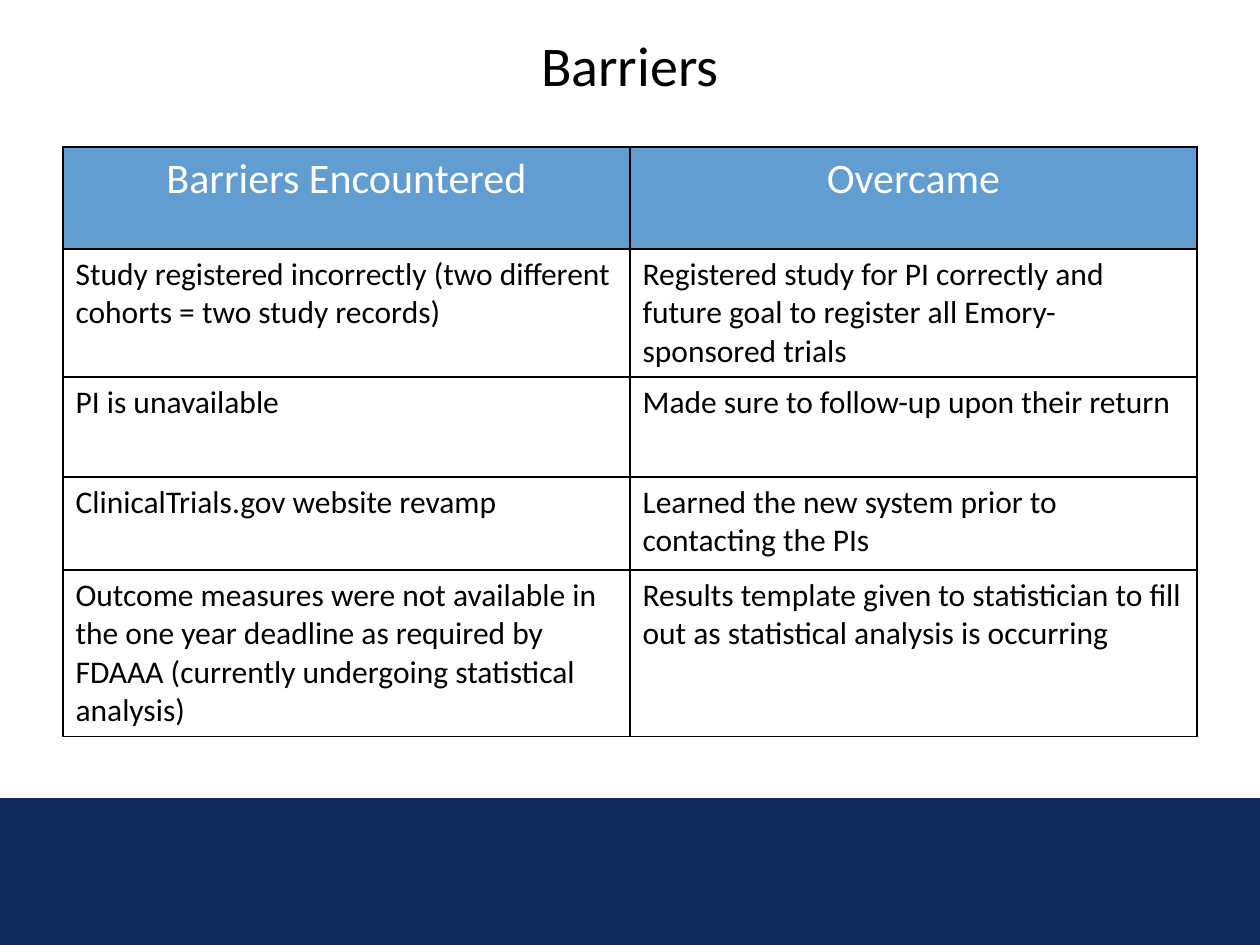
"""Build the Barriers slide: a title, a two-column table and a footer band."""
from lxml import etree
from pptx import Presentation
from pptx import util as u
from pptx.dml.color import RGBColor
from pptx.enum import shapes, text
from pptx.oxml.ns import qn

COLORS = {"black": "000000", "white": "FFFFFF", "header": "629DD1", "band": "122A5D"}
FONT = "Calibri"
PX_PER_INCH = 126

ROWS = [
    ("Barriers Encountered", "Overcame"),
    ("Study registered incorrectly (two different cohorts = two study records)",
     "Registered study for PI correctly and future goal to register all Emory-sponsored trials"),
    ("PI is unavailable", "Made sure to follow-up upon their return"),
    ("ClinicalTrials.gov website revamp",
     "Learned the new system prior to contacting the PIs"),
    ("Outcome measures were not available in the one year deadline as required by FDAAA "
     "(currently undergoing statistical analysis)",
     "Results template given to statistician to fill out as statistical analysis is occurring"),
]
ROW_HEIGHTS = [102, 101, 100, 93, 93]


def px(n):
    return u.Emu(round(n * 914400 / PX_PER_INCH))


def rgb(name):
    return RGBColor.from_string(COLORS[name])


class SlideBuilder:
    def __init__(self, prs):
        self.s = prs.slides.add_slide(prs.slide_layouts[5])

    def label(self, tf, words, size, color, align):
        tf.text = words
        p = tf.paragraphs[0]
        p.alignment = align
        p.font.name = FONT
        p.font.size = u.Pt(size)
        p.font.color.rgb = rgb(color)

    def band(self, x, y, w, h):
        sp = self.s.shapes.add_shape(shapes.MSO_SHAPE.RECTANGLE, px(x), px(y), px(w), px(h))
        sp.shadow.inherit = False
        sp.fill.solid()
        sp.fill.fore_color.rgb = rgb("band")
        sp.line.fill.background()

    def title(self, words, x, y, w, h):
        sp = self.s.shapes.title
        sp.left, sp.top, sp.width, sp.height = px(x), px(y), px(w), px(h)
        sp.text_frame.vertical_anchor = text.MSO_ANCHOR.MIDDLE
        self.label(sp.text_frame, words, 32, "black", text.PP_ALIGN.CENTER)

    def border(self, cell):
        props = cell._tc.get_or_add_tcPr()
        for i, side in enumerate(("lnL", "lnR", "lnT", "lnB")):
            ln = etree.Element(qn(f"a:{side}"), w=str(u.Pt(1)))
            fill = etree.SubElement(ln, qn("a:solidFill"))
            etree.SubElement(fill, qn("a:srgbClr"), val=COLORS["black"])
            props.insert(i, ln)

    def table(self, rows, heights, x, y, w):
        cols = len(rows[0])
        frame = self.s.shapes.add_table(len(rows), cols, px(x), px(y), px(w), px(sum(heights)))
        tbl = frame.table
        tbl.first_row = False
        for col in tbl.columns:
            col.width = px(w / cols)
        for i, (words, height) in enumerate(zip(rows, heights)):
            tbl.rows[i].height = px(height)
            if i == 0:
                fill, style = "header", (24, "white", text.PP_ALIGN.CENTER)
            else:
                fill, style = "white", (18, "black", text.PP_ALIGN.LEFT)
            for cell, content in zip(tbl.rows[i].cells, words):
                cell.fill.solid()
                cell.fill.fore_color.rgb = rgb(fill)
                self.border(cell)
                self.label(cell.text_frame, content, *style)


def main():
    prs = Presentation()
    prs.slide_width, prs.slide_height = px(1260), px(945)
    slide = SlideBuilder(prs)
    slide.band(0, 798, 1260, 147)
    slide.title("Barriers", 63, 19, 1134, 91)
    slide.table(ROWS, ROW_HEIGHTS, 63, 147, 1134)
    prs.save("out.pptx")


if __name__ == "__main__":
    main()
